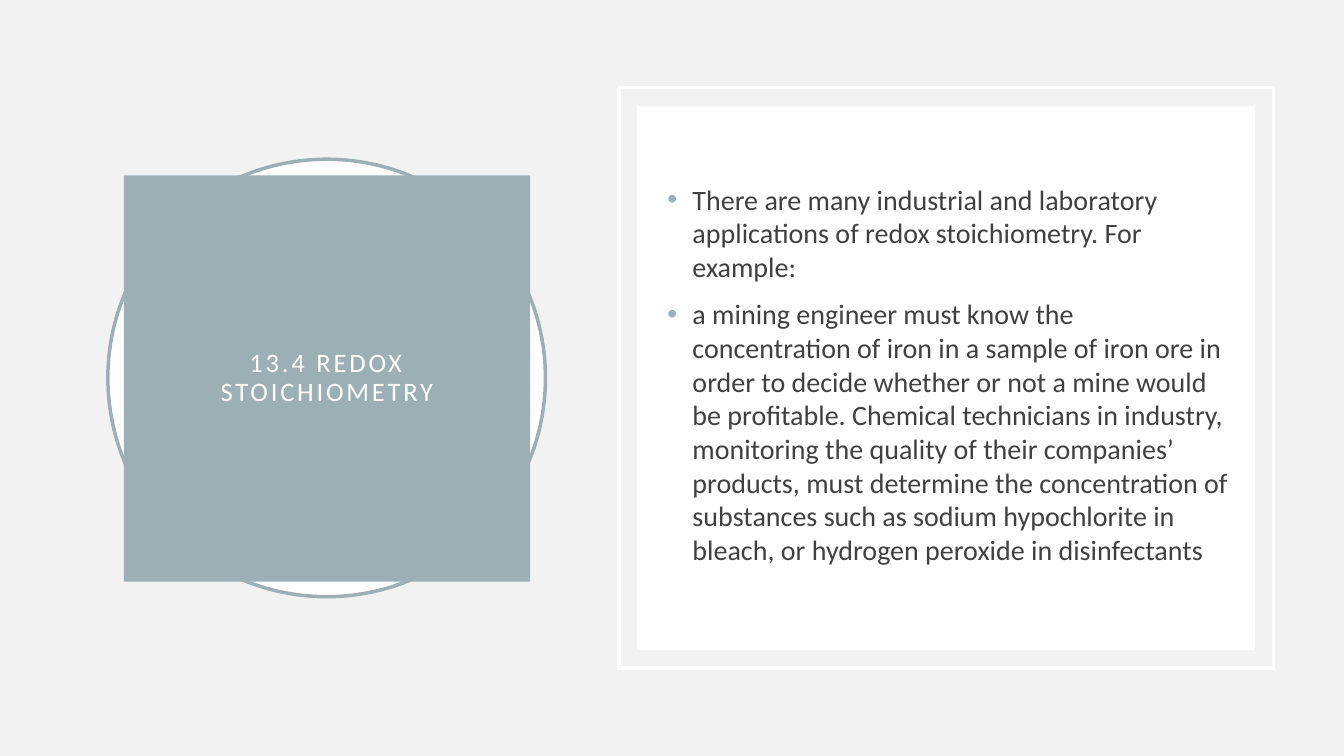
from dataclasses import dataclass

from lxml.etree import SubElement
from pptx import Presentation
from pptx.dml.color import RGBColor
from pptx.enum.shapes import MSO_SHAPE
from pptx.enum.text import MSO_ANCHOR, PP_ALIGN
from pptx.oxml.ns import qn
from pptx.util import Inches, Pt


@dataclass(frozen=True)
class Theme:
    font: str = "Calibri"
    ground: RGBColor = RGBColor.from_string("F2F2F2")
    accent: RGBColor = RGBColor.from_string("9BAFB5")
    white: RGBColor = RGBColor.from_string("FFFFFF")
    ink: RGBColor = RGBColor.from_string("404040")
    title_size: int = 19
    body_size: int = 20
    line_width: float = 2.5


theme = Theme()
deck = Presentation()
deck.slide_width, deck.slide_height = Inches(13.33), Inches(7.5)
page = deck.slides.add_slide(deck.slide_layouts[6])
page.background.fill.solid()
page.background.fill.fore_color.rgb = theme.ground


def add_panel(kind, left, top, width, height, fill=None, line=None):
    panel = page.shapes.add_shape(
        kind, Inches(left), Inches(top), Inches(width), Inches(height))
    panel.shadow.inherit = False
    if fill is None:
        panel.fill.background()
    else:
        panel.fill.solid()
        panel.fill.fore_color.rgb = fill
    if line is None:
        panel.line.fill.background()
    else:
        panel.line.color.rgb = line
        panel.line.width = Pt(theme.line_width)
    return panel


def style_font(para, size, color):
    para.font.name = theme.font
    para.font.size = Pt(size)
    para.font.color.rgb = color


# Title badge: a ring behind a solid square
add_panel(MSO_SHAPE.OVAL, 1.07, 1.58, 4.34, 4.34, theme.white, theme.accent)
badge = add_panel(MSO_SHAPE.RECTANGLE, 1.23, 1.74, 4.03, 4.03, theme.accent)
frame = badge.text_frame
frame.word_wrap = True
frame.vertical_anchor = MSO_ANCHOR.MIDDLE
frame.margin_left = frame.margin_right = Inches(0.7)
title = frame.paragraphs[0]
title.alignment = PP_ALIGN.CENTER
title.line_spacing = 0.9
span = title.add_run()
span.text = "13.4 REDOX STOICHIOMETRY"
style_font(title, theme.title_size, theme.white)
span.font._element.set("spc", "200")

# Content card: an outline around a white panel
add_panel(MSO_SHAPE.RECTANGLE, 6.14, 0.87, 6.49, 5.76, line=theme.white)
add_panel(MSO_SHAPE.RECTANGLE, 6.32, 1.05, 6.13, 5.4, theme.white)

# Bulleted body
points = [
    "There are many industrial and laboratory applications of redox "
    "stoichiometry. For example:",
    "a mining engineer must know the concentration of iron in a sample of "
    "iron ore in order to decide whether or not a mine would be profitable. "
    "Chemical technicians in industry, monitoring the quality of their "
    "companies’ products, must determine the concentration of substances "
    "such as sodium hypochlorite in bleach, or hydrogen peroxide in "
    "disinfectants",
]
box = page.shapes.add_textbox(
    Inches(6.52), Inches(1.22), Inches(5.84), Inches(4.98))
body = box.text_frame
body.word_wrap = True
body.vertical_anchor = MSO_ANCHOR.MIDDLE
for index, point in enumerate(points):
    para = body.add_paragraph() if index else body.paragraphs[0]
    para.text = point
    para.space_before = Pt(10)
    props = para._p.get_or_add_pPr()
    props.set("marL", str(Inches(0.25)))
    props.set("indent", str(-Inches(0.25)))
    bullet_color = SubElement(props, qn("a:buClr"))
    SubElement(bullet_color, qn("a:srgbClr"), val=str(theme.accent))
    SubElement(props, qn("a:buFont"), typeface="Arial")
    SubElement(props, qn("a:buChar"), char="•")
    style_font(para, theme.body_size, theme.ink)

deck.save("out.pptx")
